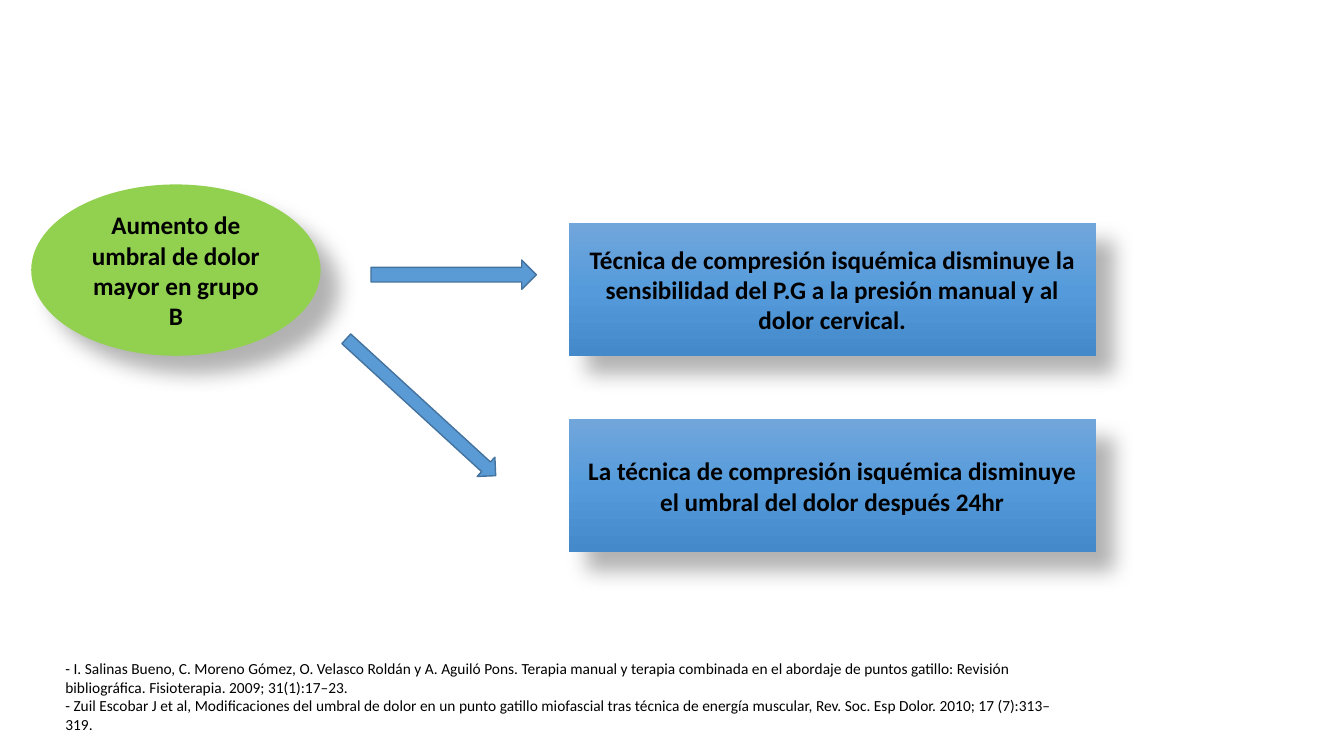
from copy import deepcopy

from lxml.etree import fromstring
from pptx import Presentation
from pptx.dml.color import RGBColor
from pptx.enum.shapes import MSO_SHAPE as Preset
from pptx.enum.text import MSO_ANCHOR as Anchor, MSO_AUTO_SIZE as AutoSize, PP_ALIGN as Align
from pptx.util import Inches, Pt

SHADOW = (
    '<a:outerShdw xmlns:a="http://schemas.openxmlformats.org/drawingml/2006/main"'
    ' blurRad="190500" dist="228600" dir="2700000" algn="tl" rotWithShape="0">'
    '<a:srgbClr val="000000"><a:alpha val="30000"/></a:srgbClr></a:outerShdw>'
)


def paint(color_format, hex_color):
    color_format.rgb = RGBColor.from_string(hex_color)


def write(shape, text, size, bold, align):
    frame = shape.text_frame
    frame.word_wrap = True
    frame.text = text
    for paragraph in frame.paragraphs:
        paragraph.alignment = align
        for run in paragraph.runs:
            run.font.name = "Calibri"
            run.font.size = Pt(size)
            run.font.bold = bold
            paint(run.font.color, "000000")


prs = Presentation()
prs.slide_width, prs.slide_height = Inches(13.33), Inches(7.5)
slide = prs.slides.add_slide(prs.slide_layouts[6])
shapes = slide.shapes

statements = [
    (Preset.OVAL, 0.31, 1.83, 2.87, 1.7, ["92D050"],
     "Aumento de umbral de dolor mayor en grupo B"),
    (Preset.RECTANGLE, 5.64, 2.21, 5.23, 1.32, ["71A6DB", "559BDB", "448ACA"],
     "Técnica de compresión isquémica disminuye la sensibilidad del P.G a la presión manual y al dolor cervical."),
    (Preset.RECTANGLE, 5.64, 4.16, 5.23, 1.32, ["71A6DB", "559BDB", "448ACA"],
     "La técnica de compresión isquémica disminuye el umbral del dolor después 24hr"),
]
for preset, left, top, width, height, colors, text in statements:
    statement = shapes.add_shape(preset, Inches(left), Inches(top), Inches(width), Inches(height))
    statement.shadow.inherit = False
    statement._element.spPr.find("{*}effectLst").append(fromstring(SHADOW))
    statement.line.fill.background()
    if len(colors) == 1:
        statement.fill.solid()
        paint(statement.fill.fore_color, colors[0])
    else:
        statement.fill.gradient()
        statement.fill.gradient_angle = 270
        stop_list = statement._element.spPr.find("{*}gradFill/{*}gsLst")
        stop_list.insert(1, deepcopy(stop_list[0]))
        for index, (stop, color) in enumerate(zip(statement.fill.gradient_stops, colors)):
            stop.position = index / 2
            paint(stop.color, color)
    statement.text_frame.vertical_anchor = Anchor.MIDDLE
    write(statement, text, 18, True, Align.CENTER)

references = shapes.add_textbox(Inches(0.55), Inches(6.49), Inches(10.04), Inches(0.84))
write(
    references,
    "\n".join([
        "- I. Salinas Bueno, C. Moreno Gómez, O. Velasco Roldán y A. Aguiló Pons. Terapia manual y terapia "
        "combinada en el abordaje de puntos gatillo: Revisión bibliográfica. Fisioterapia. 2009; 31(1):17–23.",
        "- Zuil Escobar J et al, Modificaciones del umbral de dolor en un punto gatillo miofascial tras técnica "
        "de energía muscular, Rev. Soc. Esp Dolor. 2010; 17 (7):313–319.",
    ]),
    11, False, Align.LEFT,
)
references.text_frame.auto_size = AutoSize.SHAPE_TO_FIT_TEXT

for left, top, width, height, angle in [(3.68, 2.58, 1.64, 0.29, 0), (3.17, 3.91, 2.01, 0.26, 42.5)]:
    arrow = shapes.add_shape(Preset.RIGHT_ARROW, Inches(left), Inches(top), Inches(width), Inches(height))
    arrow.rotation = angle
    arrow.shadow.inherit = False
    arrow.fill.solid()
    paint(arrow.fill.fore_color, "5B9BD5")
    paint(arrow.line.color, "43739E")
    arrow.line.width = Pt(1)

prs.save("out.pptx")
